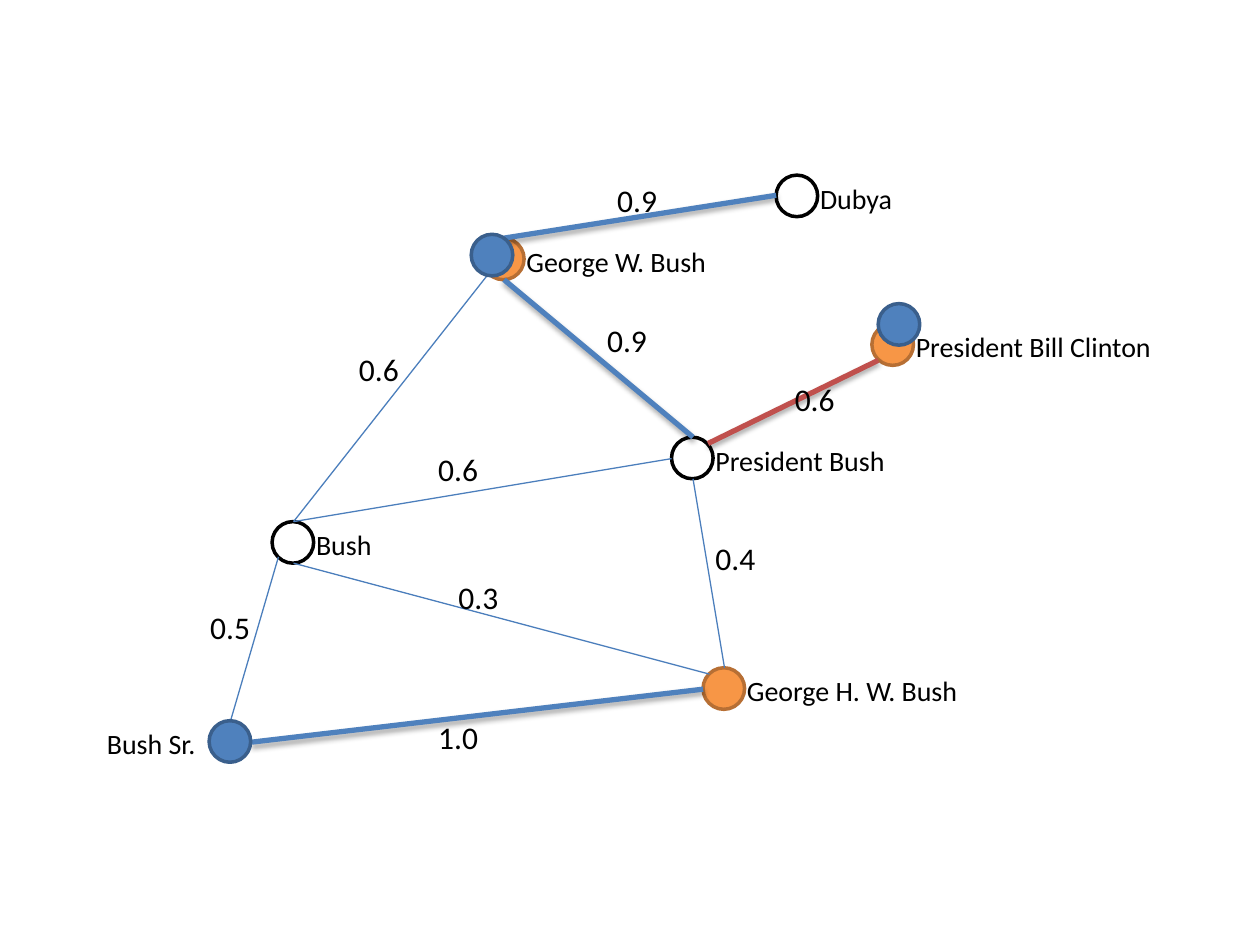
from dataclasses import dataclass
from typing import NamedTuple

from lxml.etree import SubElement
from pptx import Presentation
from pptx.dml.color import RGBColor
from pptx.enum.shapes import MSO_CONNECTOR as Connector, MSO_SHAPE as Shape
from pptx.enum.text import MSO_AUTO_SIZE as AutoSize
from pptx.oxml.ns import qn
from pptx.util import Emu, Pt

EMU_PER_PX = 9144  # 100 px to the inch
NODE_SIZE = 33
LABEL_OFFSET = 25
LABEL_HEIGHT = 37
WEIGHT_WIDTH, WEIGHT_HEIGHT = 94, 40


class NodeStyle(NamedTuple):
    fill: str
    outline: str


class EdgeStyle(NamedTuple):
    color: str
    width: float
    shadow: bool


@dataclass(frozen=True)
class Theme:
    font: str = "Calibri"
    text: str = "000000"
    label_size: int = 16
    weight_size: int = 18
    outline_width: int = 2
    mention: NodeStyle = NodeStyle("FFFFFF", "000000")
    orange: NodeStyle = NodeStyle("F79646", "B76F34")
    blue: NodeStyle = NodeStyle("4F81BD", "3A5F8C")
    weak: EdgeStyle = EdgeStyle("4B7EBC", 0.75, False)
    strong: EdgeStyle = EdgeStyle("4F81BD", 3, True)
    conflict: EdgeStyle = EdgeStyle("C0504D", 3, True)


THEME = Theme()


class Node(NamedTuple):
    left: int
    top: int
    style: NodeStyle
    label: str = ""
    label_width: int = 208


class Edge(NamedTuple):
    start: tuple[int, int]
    end: tuple[int, int]
    style: EdgeStyle
    weight: str
    weight_at: tuple[int, int]


NODES = [
    Node(383, 189, THEME.orange, "George W. Bush"),
    Node(616, 139, THEME.mention, "Dubya"),
    Node(216, 414, THEME.mention, "Bush"),
    Node(533, 347, THEME.mention, "President Bush"),
    Node(558, 530, THEME.orange, "George H. W. Bush", 233),
    Node(692, 257, THEME.orange, "President Bill Clinton", 239),
]
BLUE_NODES = [
    Node(374, 186, THEME.blue),
    Node(166, 572, THEME.blue),
    Node(697, 241, THEME.blue),
]
EDGES = [
    Edge((183, 572), (221, 442), THEME.weak, "0.5", (157, 478)),
    Edge((575, 530), (550, 380), THEME.weak, "0.4", (558, 423)),
    Edge((558, 547), (200, 589), THEME.strong, "1.0", (338, 565)),
    Edge((400, 222), (550, 347), THEME.strong, "0.9", (472, 250)),
    Edge((233, 414), (533, 364), THEME.weak, "0.6", (338, 352)),
    Edge((400, 189), (616, 155), THEME.strong, "0.9", (480, 139)),
    Edge((233, 447), (563, 535), THEME.weak, "0.3", (354, 454)),
    Edge((388, 217), (233, 414), THEME.weak, "0.6", (275, 273)),
    Edge((562, 352), (697, 286), THEME.conflict, "0.6", (621, 297)),
]


def px(value: int) -> Emu:
    return Emu(value * EMU_PER_PX)


def rgb(color: str) -> RGBColor:
    return RGBColor.from_string(color)


def add_text(page, text: str, left: int, top: int, width: int, height: int, size: int) -> None:
    box = page.shapes.add_textbox(px(left), px(top), px(width), px(height))
    frame = box.text_frame
    frame.word_wrap = True
    frame.auto_size = AutoSize.SHAPE_TO_FIT_TEXT
    span = frame.paragraphs[0].add_run()
    span.text = text
    for name, value in {"name": THEME.font, "size": Pt(size)}.items():
        setattr(span.font, name, value)
    span.font.color.rgb = rgb(THEME.text)


def add_node(page, node: Node) -> None:
    circle = page.shapes.add_shape(
        Shape.OVAL, px(node.left), px(node.top), px(NODE_SIZE), px(NODE_SIZE))
    circle.shadow.inherit = False
    circle.fill.solid()
    circle.fill.fore_color.rgb = rgb(node.style.fill)
    circle.line.color.rgb = rgb(node.style.outline)
    circle.line.width = Pt(THEME.outline_width)
    if node.label:
        add_text(page, node.label, node.left + LABEL_OFFSET, node.top,
                 node.label_width, LABEL_HEIGHT, THEME.label_size)


def add_edge(page, edge: Edge) -> None:
    line = page.shapes.add_connector(
        Connector.STRAIGHT, *map(px, edge.start), *map(px, edge.end))
    line.line.color.rgb = rgb(edge.style.color)
    line.line.width = Pt(edge.style.width)
    effects = SubElement(line._element.spPr, qn("a:effectLst"))
    if edge.style.shadow:
        shadow = SubElement(effects, qn("a:outerShdw"), blurRad=str(Pt(3.1)),
                            dist=str(Pt(1.8)), dir="5400000", rotWithShape="0")
        color = SubElement(shadow, qn("a:srgbClr"), val=THEME.text)
        SubElement(color, qn("a:alpha"), val="35000")


def main() -> None:
    deck = Presentation()
    deck.slide_width, deck.slide_height = px(1000), px(750)
    page = deck.slides.add_slide(deck.slide_layouts[6])

    for node in NODES:
        add_node(page, node)
    add_text(page, "Bush Sr.", 75, 572, 100, LABEL_HEIGHT, THEME.label_size)
    for edge in EDGES:
        add_edge(page, edge)
    for edge in EDGES:
        add_text(page, edge.weight, *edge.weight_at,
                 WEIGHT_WIDTH, WEIGHT_HEIGHT, THEME.weight_size)
    for node in BLUE_NODES:
        add_node(page, node)

    deck.save("out.pptx")


if __name__ == "__main__":
    main()
